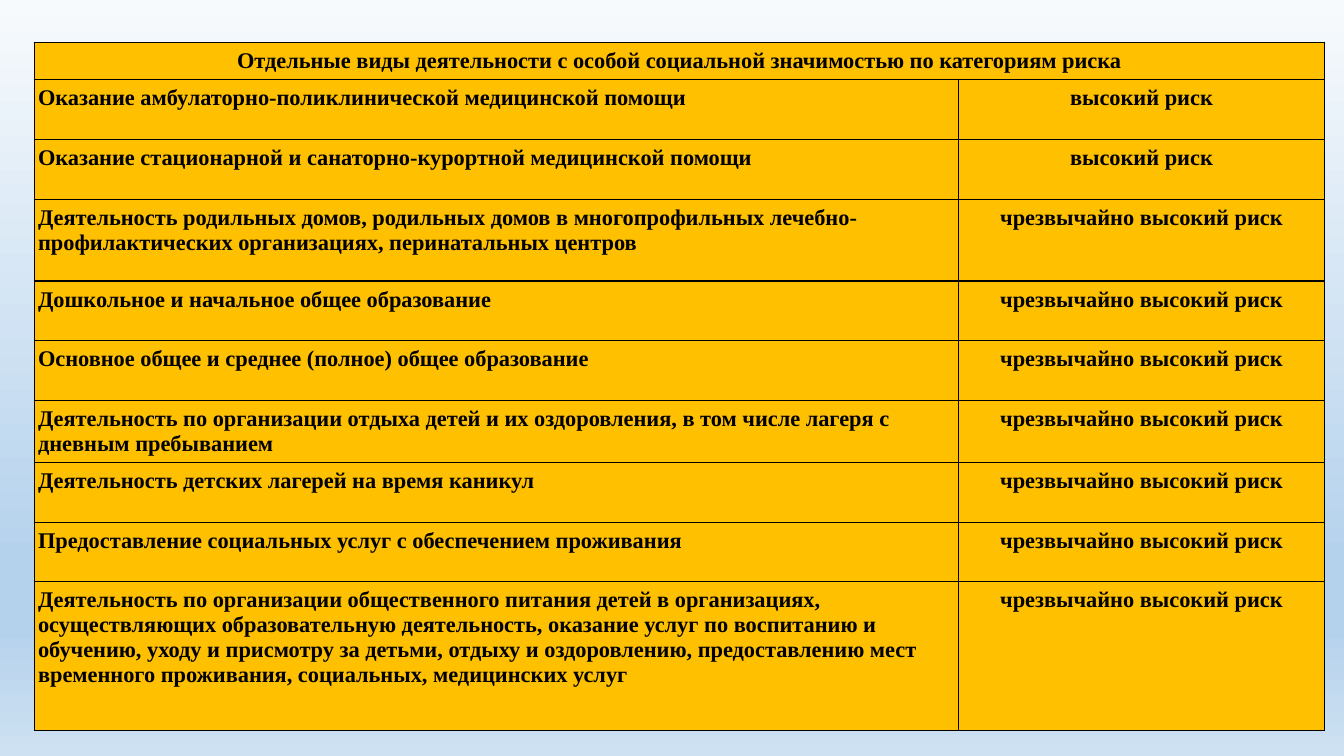
"""Build a slide with a table of activities by risk level."""
import dataclasses

import lxml.etree
import pptx
import pptx.dml.color
import pptx.enum.text
import pptx.oxml.ns
import pptx.util

Pt = pptx.util.Pt
qn = pptx.oxml.ns.qn
Align = pptx.enum.text.PP_ALIGN


@dataclasses.dataclass(frozen=True)
class Theme:
    """Hold the colours, font and type size."""
    font: str = "Times New Roman"
    size: int = 16
    ink: str = "000000"
    amber: str = "FFC000"
    line: int = 1
    sky: tuple = ((0, "F7FAFD"), (74, "B5D2EC"), (83, "B5D2EC"), (100, "CEE1F2"))


THEME = Theme()
HIGH = "высокий риск"
TOP = "чрезвычайно высокий риск"
HEAD = "Отдельные виды деятельности с особой социальной значимостью по категориям риска"
LOW = 42.7
ROWS = [
    (LOW, "Оказание амбулаторно-поликлинической медицинской помощи", HIGH),
    (LOW, "Оказание стационарной и санаторно-курортной медицинской помощи", HIGH),
    (58.3, "Деятельность родильных домов, родильных домов в многопрофильных "
     "лечебно-профилактических организациях, перинатальных центров", TOP),
    (LOW, "Дошкольное и начальное общее образование", TOP),
    (LOW, "Основное общее и среднее (полное) общее образование", TOP),
    (LOW, "Деятельность по организации отдыха детей и их оздоровления, "
     "в том числе лагеря с дневным пребыванием", TOP),
    (LOW, "Деятельность детских лагерей на время каникул", TOP),
    (LOW, "Предоставление социальных услуг с обеспечением проживания", TOP),
    (106, "Деятельность по организации общественного питания детей в организациях, "
     "осуществляющих образовательную деятельность, оказание услуг по воспитанию и "
     "обучению, уходу и присмотру за детьми, отдыху и оздоровлению, предоставлению "
     "мест временного проживания, социальных, медицинских услуг", TOP),
]
WIDTHS = (660.2, 261.4)
INSETS = {"margin_left": Pt(2.7), "margin_right": Pt(2.7),
          "margin_top": Pt(4.3), "margin_bottom": Pt(4.3)}


def apply(item, form):
    """Set each attribute in form on item."""
    for name, value in form.items():
        setattr(item, name, value)


def add_tint(node, tone):
    """Add an RGB colour element under node."""
    lxml.etree.SubElement(node, qn("a:srgbClr"), val=tone)


def paint_back(slide):
    """Fill the slide with the vertical sky gradient."""
    fill = slide.background.fill
    fill.gradient()
    fill.gradient_angle = 270
    stops = next(slide.element.iter(qn("a:gsLst")))
    for stop in list(stops):
        stops.remove(stop)
    for place, tone in THEME.sky:
        add_tint(lxml.etree.SubElement(stops, qn("a:gs"), pos=str(place * 1000)), tone)


def rule_cell(cell):
    """Draw the four borders of a cell."""
    props = cell._tc.get_or_add_tcPr()
    for side in "LRTB":
        line = lxml.etree.SubElement(props, qn("a:ln" + side), w=str(Pt(THEME.line)))
        add_tint(lxml.etree.SubElement(line, qn("a:solidFill")), THEME.ink)


def fill_cell(cell, text, align):
    """Format a cell and write its text."""
    apply(cell, INSETS)
    rule_cell(cell)
    cell.fill.solid()
    cell.fill.fore_color.rgb = pptx.dml.color.RGBColor.from_string(THEME.amber)
    para = cell.text_frame.paragraphs[0]
    para.alignment = align
    apply(para.font, {"name": THEME.font, "size": Pt(THEME.size), "bold": True})
    para.font.color.rgb = pptx.dml.color.RGBColor.from_string(THEME.ink)
    if text:
        run = para.add_run()
        run.text = text
        apply(run.font, {"name": THEME.font, "size": Pt(THEME.size), "bold": True})
        run.font.color.rgb = pptx.dml.color.RGBColor.from_string(THEME.ink)


def add_grid(slide):
    """Add the risk table with its merged heading."""
    rows = [(26.9, HEAD, "")] + ROWS
    tall = sum(row[0] for row in rows)
    frame = slide.shapes.add_table(len(rows), len(WIDTHS), Pt(24.5), Pt(30.2),
                                   Pt(sum(WIDTHS)), Pt(tall))
    grid = frame.table
    apply(grid, {"first_row": False, "horz_banding": False})
    for col, width in zip(grid.columns, WIDTHS):
        col.width = Pt(width)
    for num, (height, *texts) in enumerate(rows):
        grid.rows[num].height = Pt(height)
        aligns = (Align.LEFT if num else Align.CENTER, Align.CENTER)
        for col, (text, align) in enumerate(zip(texts, aligns)):
            fill_cell(grid.cell(num, col), text, align)
    grid.cell(0, 0).merge(grid.cell(0, 1))


def main():
    """Build and save the deck."""
    deck = pptx.Presentation()
    apply(deck, {"slide_width": Pt(960), "slide_height": Pt(540)})
    slide = deck.slides.add_slide(deck.slide_layouts[6])
    paint_back(slide)
    add_grid(slide)
    deck.save("out.pptx")


if __name__ == "__main__":
    main()
